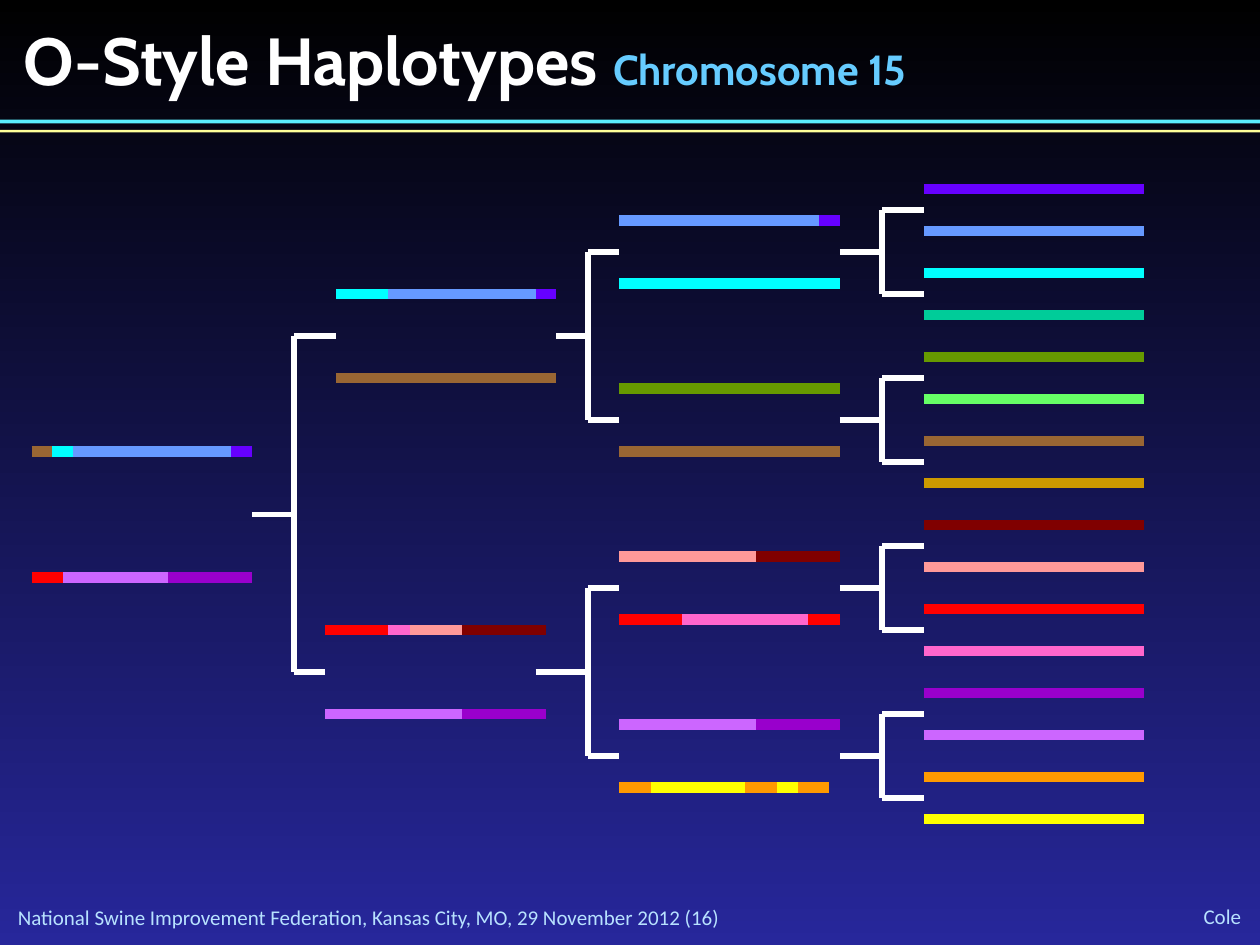
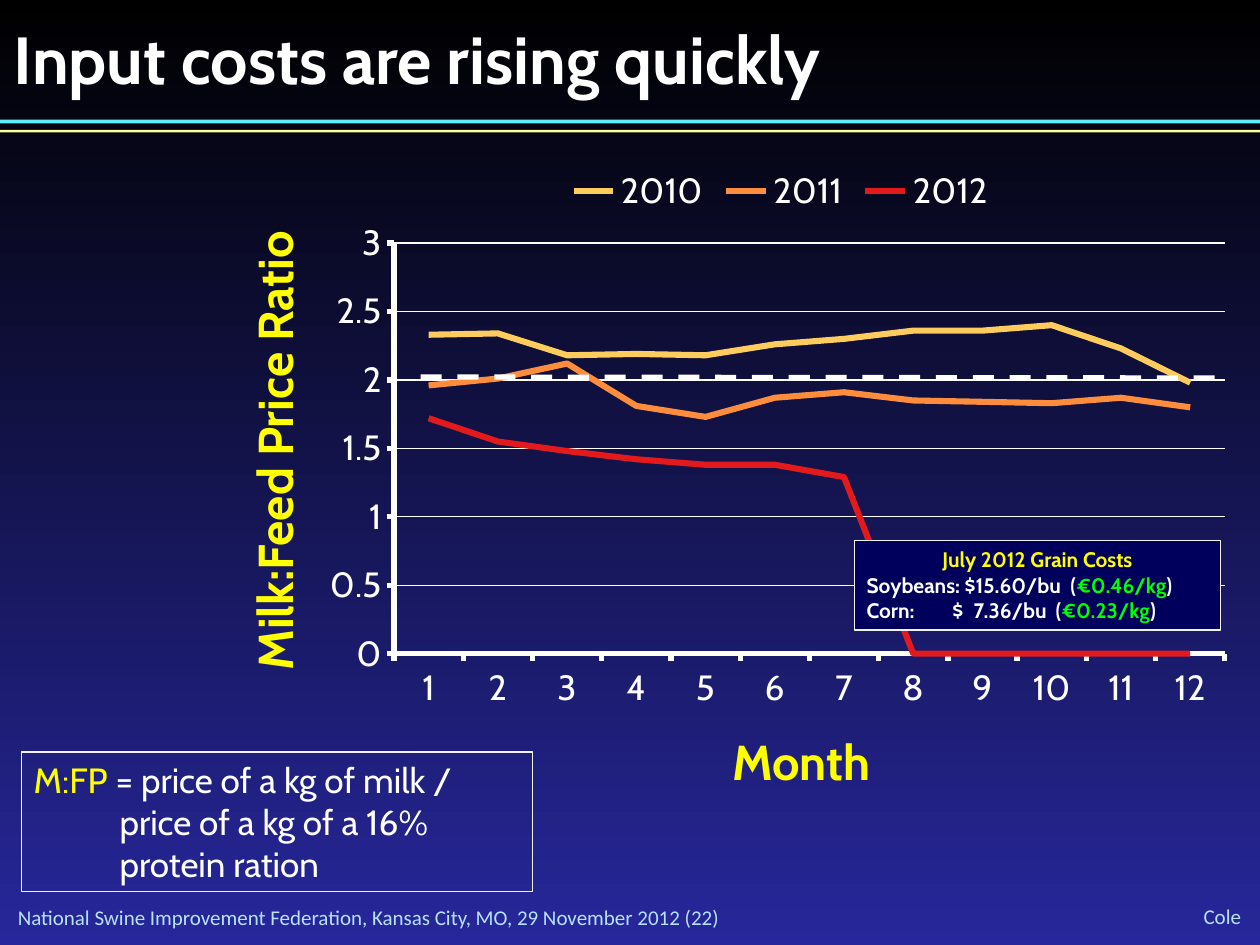
from lxml import etree
from pptx import Presentation
from pptx.chart.data import CategoryChartData
from pptx.dml.color import RGBColor
from pptx.enum import chart as ch, dml, shapes, text
from pptx.oxml import ns
from pptx.util import Cm, Pt

# ---- Content -------------------------------------------------------------
C = {
    "black": "000000", "navy": "27279B", "white": "FFFFFF", "footer": "B8E2FF",
    "band_cyan": "5BEFFF", "band_yellow": "FFFF99", "subtitle": "66CCFF",
    "frame": "F2F2F2", "box": "00005C", "price": "00FF00",
    "violet": "6600FF", "blue": "6699FF", "cyan": "00FFFF", "teal": "00CC99",
    "green": "669900", "lime": "66FF66", "brown": "996633", "ochre": "CC9900",
    "maroon": "800000", "salmon": "FF9999", "red": "FF0000", "pink": "FF66CC",
    "purple": "9900CC", "lilac": "CC66FF", "orange": "FF9900", "yellow": "FFFF00",
    "2010": "FECC5C", "2011": "FD8D3C", "2012": "E31A1C",
}
FONT = "Cabin"
FOOTER = "National Swine Improvement Federation, Kansas City, MO, 29 November 2012 ({})"
AUTHOR = "Cole"
BANDS = [("band_cyan", 2.41, 0.08), ("band_yellow", 2.62, 0.05)]  # colour, top, height

# The pedigree is laid out on a grid of twelfths of an inch.
GRID = 2.54 / 12
BAR = 21
ANCESTORS = ["violet", "blue", "cyan", "teal", "green", "lime", "brown", "ochre",
             "maroon", "salmon", "red", "pink", "purple", "lilac", "orange", "yellow"]
# left, top, [(colour, length), ...]
HAPLOTYPES = [
    (3, 43, [("brown", 2), ("cyan", 2), ("blue", 15), ("violet", 2)]),
    (3, 55, [("red", 3), ("lilac", 10), ("purple", 8)]),
    (32, 28, [("cyan", 5), ("blue", 14), ("violet", 2)]),
    (32, 36, [("brown", BAR)]),
    (31, 60, [("red", 6), ("pink", 2), ("salmon", 5), ("maroon", 8)]),
    (31, 68, [("lilac", 13), ("purple", 8)]),
    (59, 21, [("blue", 19), ("violet", 2)]),
    (59, 27, [("cyan", BAR)]),
    (59, 37, [("green", BAR)]),
    (59, 43, [("brown", BAR)]),
    (59, 53, [("salmon", 13), ("maroon", 8)]),
    (59, 59, [("red", 6), ("pink", 12), ("red", 3)]),
    (59, 69, [("lilac", 13), ("purple", 8)]),
    (59, 75, [("orange", 3), ("yellow", 9), ("orange", 3), ("yellow", 2), ("orange", 3)]),
] + [(88, 18 + 4 * i, [(color, BAR)]) for i, color in enumerate(ANCESTORS)]
# stem start, stem height, spine, ends of the upper and lower arms
BRACKETS = [
    (24, 49, 28, (32, 32), (31, 64)),
    (53, 32, 56, (59, 24), (59, 40)),
    (51, 64, 56, (59, 56), (59, 72)),
] + [(80, y, 84, (88, y - 4), (88, y + 4)) for y in (24, 40, 56, 72)]

MONTHS = [str(m) for m in range(1, 13)]
RATIOS = {
    "2010": [2.33, 2.34, 2.18, 2.19, 2.18, 2.26, 2.3, 2.36, 2.36, 2.4, 2.23, 1.98],
    "2011": [1.96, 2.01, 2.12, 1.81, 1.73, 1.87, 1.91, 1.85, 1.84, 1.83, 1.87, 1.8],
    "2012": [1.72, 1.55, 1.48, 1.42, 1.38, 1.38, 1.29] + [None] * 5,
}
DEFINITION = [
    [("M:FP", "yellow"), (" = price of a kg of milk /", "white")],
    [("price of a kg of a 16%", "white")],
    [("protein ration", "white")],
]
GRAIN_COSTS = [
    [("July 2012 Grain Costs", "yellow")],
    [("Soybeans: $15.60/bu\t(", "white"), ("€0.46/kg", "price"), (")", "white")],
    [("Corn:\t$\t7.36/bu\t(", "white"), ("€0.23/kg", "price"), (")", "white")],
]
GRAIN_TABS = [(), (4.11,), (1.73, 2.16, 3.81)]


# ---- Shared helpers ------------------------------------------------------
def rgb(name):
    return RGBColor.from_string(C[name])


def cm(*lengths):
    return [Cm(v) for v in lengths]


def style(font, size, color="white", bold=False, name=FONT):
    font.name, font.size, font.bold = name, Pt(size), bold
    font.color.rgb = rgb(color)


def write(tf, paragraphs, size, bold=False, align=text.PP_ALIGN.LEFT, name=FONT):
    """Fill a text frame with paragraphs, each a list of (text, colour) runs."""
    tf.word_wrap = True
    for i, runs in enumerate(paragraphs):
        p = tf.paragraphs[0] if i == 0 else tf.add_paragraph()
        p.alignment = align
        for words, color in runs:
            r = p.add_run()
            r.text = words
            style(r.font, size, color, bold, name)


def tight(tf, anchor):
    tf.margin_left = tf.margin_right = tf.margin_top = tf.margin_bottom = 0
    tf.vertical_anchor = anchor


def add_label(slide, box, words, size, color, **options):
    sp = slide.shapes.add_textbox(*cm(*box))
    write(sp.text_frame, [[(words, color)]], size, **options)
    return sp


def add_rect(slide, box, fill=None, line=None):
    sp = slide.shapes.add_shape(shapes.MSO_SHAPE.RECTANGLE, *cm(*box))
    sp.shadow.inherit = False
    if fill:
        sp.fill.solid()
        sp.fill.fore_color.rgb = rgb(fill)
    else:
        sp.fill.background()
    if line:
        sp.line.color.rgb = rgb(line)
        sp.line.width = Pt(0.75)
    else:
        sp.line.fill.background()
    return sp


def add_line(slide, x1, y1, x2, y2, color="white", width=3):
    cn = slide.shapes.add_connector(shapes.MSO_CONNECTOR.STRAIGHT, *cm(x1, y1, x2, y2))
    cn.line.color.rgb = rgb(color)
    cn.line.width = Pt(width)
    etree.SubElement(cn._element.spPr, ns.qn("a:effectLst"))
    return cn


def add_slide(prs, number, title, left, top):
    slide = prs.slides.add_slide(prs.slide_layouts[5])
    for words, box, align in [
        (FOOTER.format(number), (0.36, 18.24, 21.79, 0.51), text.PP_ALIGN.LEFT),
        (AUTHOR, (22.15, 18.21, 2.87, 0.53), text.PP_ALIGN.RIGHT),
    ]:
        sp = add_label(slide, box, words, 12, "footer", align=align, name="Calibri")
        tight(sp.text_frame, text.MSO_ANCHOR.MIDDLE)
    for color, y, height in BANDS:
        add_rect(slide, (0, y, 25.4, height), color)
    sp = slide.shapes.title
    sp.left, sp.top, sp.width, sp.height = cm(left, top, 22.86, 1.63)
    tight(sp.text_frame, text.MSO_ANCHOR.TOP)
    sp.text_frame.auto_size = text.MSO_AUTO_SIZE.NONE
    write(sp.text_frame, [[(title, "white")]], 38, bold=True)
    return slide


def set_background(master):
    fill = master.background.fill
    fill.gradient()
    fill.gradient_angle = 270
    for stop, color in zip(fill.gradient_stops, ("black", "navy")):
        stop.color.rgb = rgb(color)


# ---- Slide: haplotypes ---------------------------------------------------
def add_grid_line(slide, x1, y1, x2, y2, *look):
    add_line(slide, *(GRID * v for v in (x1, y1, x2, y2)), *look)


def build_haplotypes(prs):
    slide = add_slide(prs, 16, "O-Style Haplotypes ", 0.48, 0.38)
    r = slide.shapes.title.text_frame.paragraphs[0].add_run()
    r.text = "Chromosome 15"
    style(r.font, 24, "subtitle", bold=True)

    for stem, y, spine, upper, lower in BRACKETS:
        add_grid_line(slide, stem, y, spine, y)
        add_grid_line(slide, spine, upper[1], spine, lower[1])
        for x, arm_y in (upper, lower):
            add_grid_line(slide, spine, arm_y, x, arm_y)
    for x, y, segments in HAPLOTYPES:
        for color, length in segments:
            add_grid_line(slide, x, y, x + length, y, color, 6)
            x += length


# ---- Slide: input costs --------------------------------------------------
def place(parent, index, **fractions):
    """Give a chart part a manual layout, in fractions of the chart."""
    for old in parent.findall(ns.qn("c:layout")):
        parent.remove(old)
    layout = etree.Element(ns.qn("c:layout"))
    manual = etree.SubElement(layout, ns.qn("c:manualLayout"))
    if "w" in fractions:
        etree.SubElement(manual, ns.qn("c:layoutTarget")).set("val", "inner")
    for key in "xy":
        etree.SubElement(manual, ns.qn(f"c:{key}Mode")).set("val", "edge")
    for key, value in fractions.items():
        etree.SubElement(manual, ns.qn(f"c:{key}")).set("val", str(value))
    parent.insert(index, layout)


def add_ratio_chart(slide):
    data = CategoryChartData()
    data.categories = MONTHS
    for year, values in RATIOS.items():
        data.add_series(year, values)
    chart = slide.shapes.add_chart(
        ch.XL_CHART_TYPE.LINE, *cm(6.25, 2.92, 18.82, 11.66), data).chart
    style(chart.font, 10, name="Roboto")
    chart.has_title = False
    chart.has_legend = True
    chart.legend.position = ch.XL_LEGEND_POSITION.TOP
    chart.legend.include_in_layout = False
    style(chart.legend.font, 20)

    plot = chart.plots[0]
    plot.vary_by_categories = False
    for series in plot.series:
        series.smooth = False
        series.format.line.color.rgb = rgb(series.name)
        series.format.line.width = Pt(3.5)
    for axis in (chart.category_axis, chart.value_axis):
        axis.major_tick_mark = ch.XL_TICK_MARK.OUTSIDE
        axis.minor_tick_mark = ch.XL_TICK_MARK.NONE
        axis.format.line.color.rgb = rgb("white")
        axis.format.line.width = Pt(3)
        style(axis.tick_labels.font, 20)
    axis.minimum_scale, axis.maximum_scale, axis.major_unit = 0, 3, 0.5
    axis.has_major_gridlines = True
    axis.major_gridlines.format.line.color.rgb = rgb("white")
    axis.major_gridlines.format.line.width = Pt(0.75)

    root = chart._chartSpace.chart
    place(root.plotArea, 0, x=0.09, y=0.17, w=0.89, h=0.71)
    place(chart.legend._element, 1, x=0.27, y=0.03)
    root.find(ns.qn("c:dispBlanksAs")).set("val", "zero")


def set_tabs(p, stops):
    tabs = etree.SubElement(p._p.get_or_add_pPr(), ns.qn("a:tabLst"))
    for stop in stops:
        etree.SubElement(tabs, ns.qn("a:tab"), pos=str(Cm(stop)), algn="l")


def build_input_costs(prs):
    slide = add_slide(prs, 22, "Input costs are rising quickly", 0.28, 0.36)
    add_ratio_chart(slide)

    tf = add_rect(slide, (0.43, 15.16, 10.31, 2.82), line="frame").text_frame
    tf.vertical_anchor = text.MSO_ANCHOR.TOP
    write(tf, DEFINITION, 20)
    for p in tf.paragraphs[1:]:
        p._p.get_or_add_pPr().set("marL", str(Cm(1.73)))

    heading = dict(bold=True, align=text.PP_ALIGN.CENTER)
    add_label(slide, (9.88, 14.63, 12.55, 1.45), "Month", 28, "yellow", **heading)
    ratio = add_label(slide, (0, 8.36, 11.07, 1.45), "Milk:Feed Price Ratio", 28,
                      "yellow", **heading)
    ratio.rotation = 270

    threshold = add_line(slide, 8.48, 7.6, 24.66, 7.62)
    threshold.line.dash_style = dml.MSO_LINE.DASH

    tf = add_rect(slide, (17.22, 10.9, 7.39, 1.8), "box", "frame").text_frame
    tf.vertical_anchor = text.MSO_ANCHOR.TOP
    write(tf, GRAIN_COSTS, 12, bold=True)
    tf.paragraphs[0].alignment = text.PP_ALIGN.CENTER
    for p, stops in zip(tf.paragraphs, GRAIN_TABS):
        if stops:
            set_tabs(p, stops)


def main():
    prs = Presentation()
    prs.slide_width, prs.slide_height = cm(25.4, 19.05)
    set_background(prs.slide_master)
    build_haplotypes(prs)
    build_input_costs(prs)
    prs.save("out.pptx")


if __name__ == "__main__":
    main()
